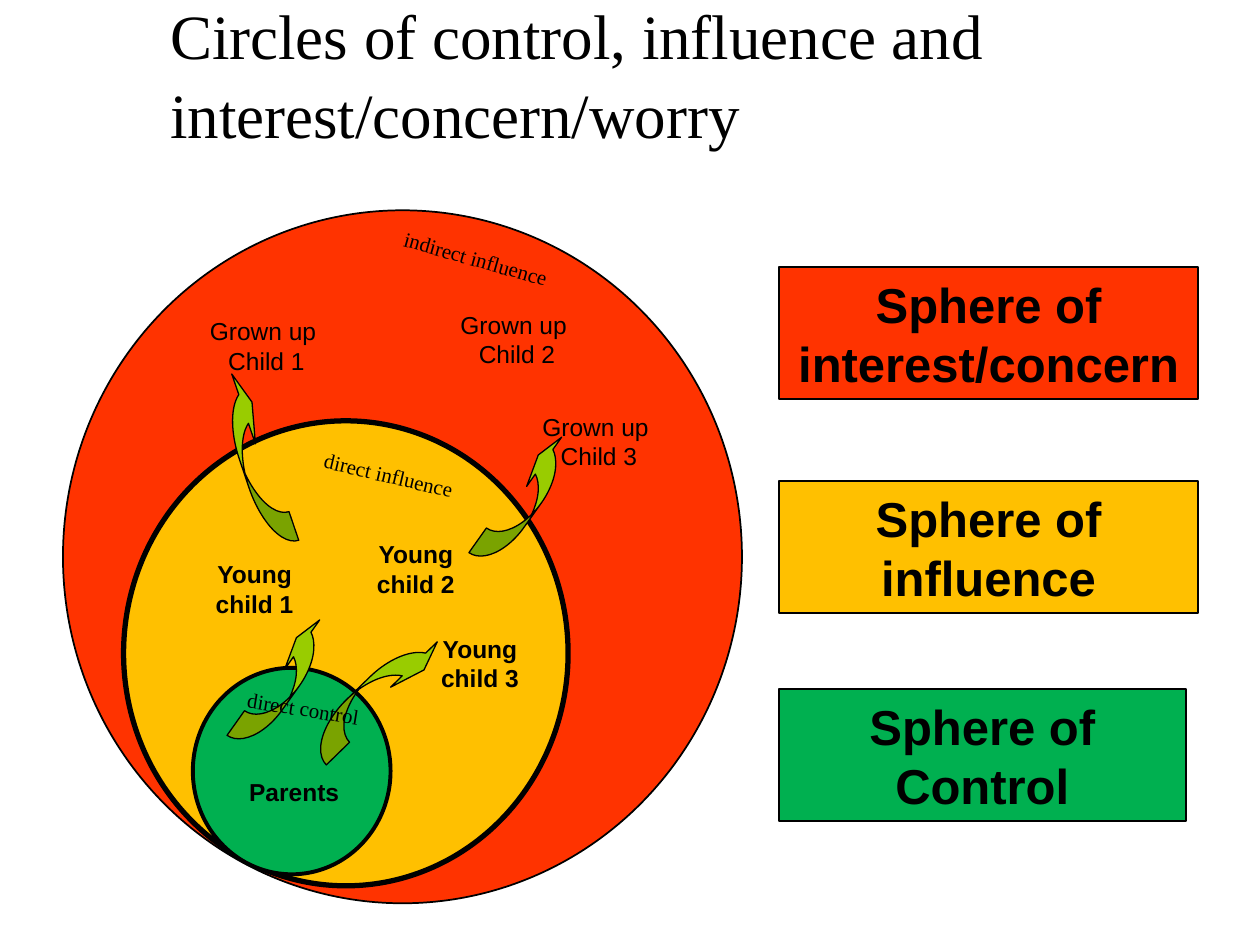
from pptx import Presentation
from pptx.dml.color import RGBColor
from pptx.enum import shapes, text
from pptx.util import Pt

BLACK = RGBColor(0x00, 0x00, 0x00)
RED = RGBColor(0xFF, 0x33, 0x00)
AMBER = RGBColor(0xFF, 0xC0, 0x00)
GREEN = RGBColor(0x00, 0xB0, 0x50)
LIME = RGBColor(0x99, 0xCC, 0x00)
SANS, SERIF = "Arial", "Times New Roman"
KIND = shapes.MSO_SHAPE
CENTER = text.PP_ALIGN.CENTER


def write(frame, words, size=14, font=SANS, bold=False, align=CENTER,
          anchor=text.MSO_ANCHOR.TOP, wrap=True, spacing=None):
    """Each newline in words starts a paragraph, each vertical tab a line."""
    frame.text = words
    frame.word_wrap = wrap
    frame.auto_size = text.MSO_AUTO_SIZE.NONE
    frame.vertical_anchor = anchor
    for paragraph in frame.paragraphs:
        paragraph.alignment = align
        paragraph.line_spacing = spacing
        for run in paragraph.runs:
            run.font.name, run.font.size, run.font.bold = font, Pt(size), bold
            run.font.color.rgb = BLACK


def add_outlined(slide, kind, box, fill, line_width, rotation=0):
    shape = slide.shapes.add_shape(kind, *map(Pt, box))
    shape.shadow.inherit = False
    shape.fill.solid()
    shape.fill.fore_color.rgb = fill
    shape.line.color.rgb = BLACK
    shape.line.width = Pt(line_width)
    shape.rotation = rotation
    return shape


def add_label(slide, words, box, rotation=0, **style):
    label = slide.shapes.add_textbox(*map(Pt, box))
    label.rotation = rotation
    write(label.text_frame, words, **style)


def add_title(slide, left, top, width, height):
    title = slide.shapes.title
    title.left, title.top = Pt(left), Pt(top)
    title.width, title.height = Pt(width), Pt(height)
    write(title.text_frame,
          "Circles of control, influence and\vinterest/concern/worry",
          size=36, font=SERIF, align=text.PP_ALIGN.LEFT,
          anchor=text.MSO_ANCHOR.BOTTOM, spacing=1.05)


def add_circles(slide, left, top, width, height):
    def inside(x, y, w, h):
        return left + x, top + y, w, h

    circles = [
        ((0, 0, width, height), RED, 1),
        ((34.6, 120.3, 254, 265.7), AMBER, 3),
        ((74.2, 261.4, 113, 118), GREEN, 2.25),
    ]
    for box, fill, line_width in circles:
        add_outlined(slide, KIND.OVAL, inside(*box), fill, line_width)

    family = [
        ("Parents", 70.6, 320.4, 123, True),
        ("Young child 1", 63.4, 195.9, 92.2, True),
        ("Young child 2", 155.5, 184.4, 92.2, True),
        ("Young child 3", 192.2, 238.4, 92.2, True),
        ("Grown up \nChild 1", 61.9, 56.9, 108.7, False),
        ("Grown up \nChild 2", 203, 53.3, 113, False),
        ("Grown up \nChild 3", 246.2, 111.6, 120.2, False),
    ]
    for words, x, y, w, bold in family:
        add_label(slide, words, inside(x, y, w, 44), bold=bold)

    up, down = KIND.CURVED_UP_ARROW, KIND.CURVED_DOWN_ARROW
    arrows = [
        (up, (82.8, 261.4, 85.7, 17.3), 305.4, (0.997, 1.994, 0.287)),
        (down, (130.3, 267.2, 96.5, 18.7), 315.8, (0.994, 1.988, 0.333)),
        (up, (221, 157, 85.7, 17.3), 305.4, (0.997, 1.994, 0.287)),
        (down, (57.6, 133.2, 104.4, 17.3), 251.3, (1.218, 2.436, 0.333)),
    ]
    for kind, box, rotation, bends in arrows:
        arrow = add_outlined(slide, kind, inside(*box), LIME, 0.75, rotation)
        for index, bend in enumerate(bends):
            arrow.adjustments[index] = bend

    reaches = [
        ("indirect influence", (180.7, 16.6, 110.2, 22.3), 15.8),
        ("direct influence", (136.8, 140.4, 98.6, 22.3), 13.3),
        ("direct control", (95, 273.6, 80.6, 47.5), 9.2),
    ]
    for words, box, rotation in reaches:
        add_label(slide, words, inside(*box), rotation,
                  size=12, font=SERIF, wrap=False)


def add_spheres(slide, left, top, width, height):
    spheres = [
        ("Sphere of interest/concern", RED, 0, width),
        ("Sphere of influence", AMBER, 122.4, width),
        ("Sphere of Control", GREEN, 241.2, width - 7.2),
    ]
    for words, fill, drop, sphere_width in spheres:
        sphere = add_outlined(slide, KIND.RECTANGLE,
                              (left, top + drop, sphere_width, height), fill, 1)
        write(sphere.text_frame, words, size=28, bold=True,
              anchor=text.MSO_ANCHOR.MIDDLE)


def main():
    deck = Presentation()
    deck.slide_width, deck.slide_height = Pt(720), Pt(540)
    slide = deck.slides.add_slide(deck.slide_layouts[5])
    add_circles(slide, 36, 120.2, 388, 396)
    add_spheres(slide, 445, 152.6, 239.8, 75.5)
    add_title(slide, 90, 5.8, 534.2, 84.2)
    deck.save("out.pptx")


if __name__ == "__main__":
    main()
